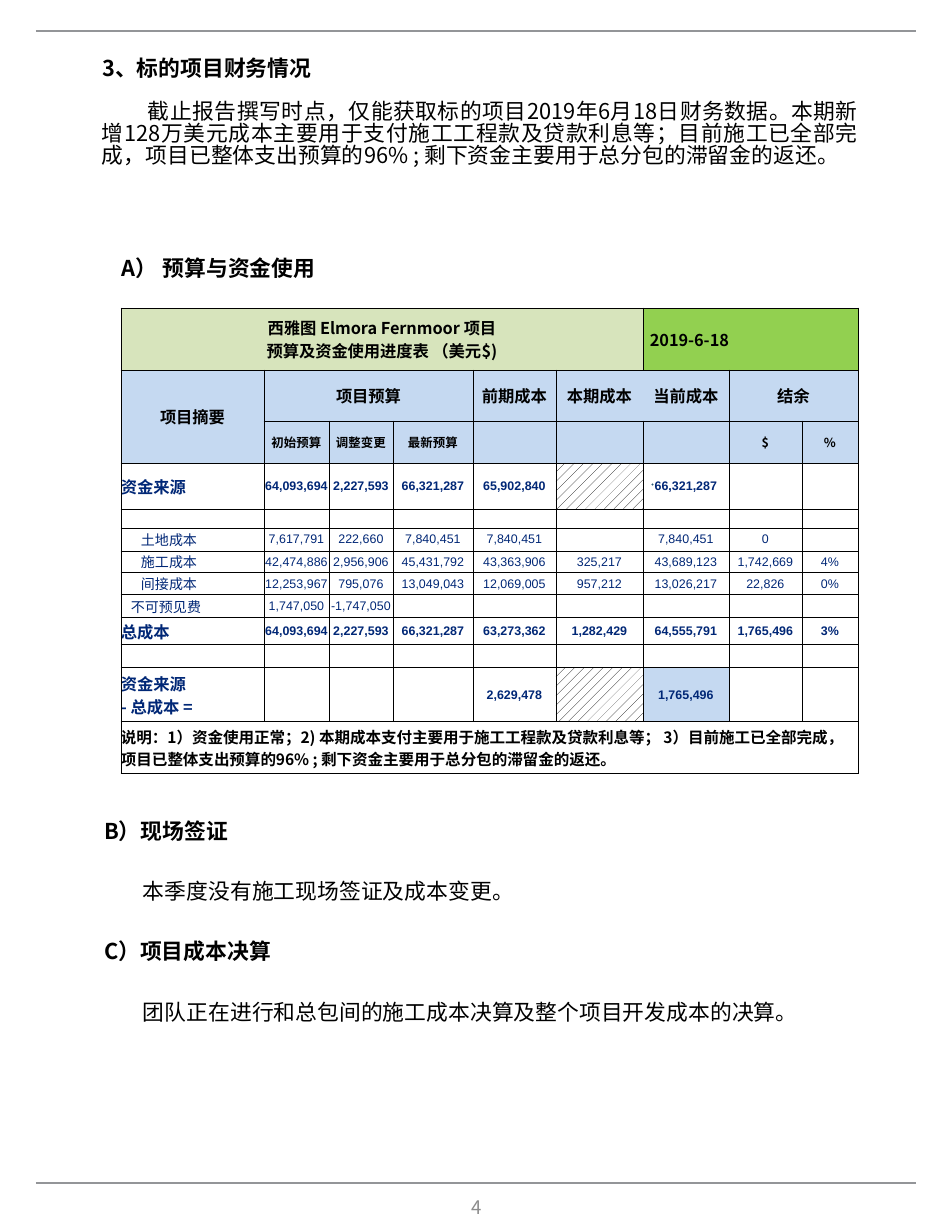
from dataclasses import dataclass
from typing import Optional

import lxml.etree
import pptx
import pptx.dml.color
import pptx.enum.dml
import pptx.enum.shapes
import pptx.enum.text
import pptx.oxml.ns
import pptx.util

RGB = pptx.dml.color.RGBColor
ALIGN = pptx.enum.text.PP_ALIGN
MIDDLE = pptx.enum.text.MSO_ANCHOR.MIDDLE
TOP = pptx.enum.text.MSO_ANCHOR.TOP
qn = pptx.oxml.ns.qn

PX = 914400 / 112  # EMU in one px
CJK, LATIN = "Noto Sans CJK SC", "Arial"
BLACK, WHITE = RGB(0, 0, 0), RGB(255, 255, 255)
NAVY, TICK = RGB(0x00, 0x27, 0x76), RGB(0x2E, 0x5A, 0x79)
RULE, PAGE = RGB(0x93, 0x95, 0x98), RGB(0x8C, 0x8C, 0x8C)
OLIVE, GREEN, BLUE = RGB(0xD7, 0xE4, 0xBC), RGB(0x92, 0xD0, 0x50), RGB(0xC5, 0xD9, 0xF1)


@dataclass
class Para:
    text: str
    size: float = 14
    bold: bool = False
    color: RGB = BLACK
    font: str = CJK
    align: ALIGN = ALIGN.LEFT
    indent: int = 0
    spacing: float = 1
    before: int = 0


@dataclass
class Header:
    row: int
    col: int
    text: str
    fill: RGB = BLUE
    size: float = 10.5
    rows: int = 1
    cols: int = 1
    align: ALIGN = ALIGN.CENTER
    left: int = 0


@dataclass
class Entry:
    label: str = ""
    values: tuple = ()
    bold: bool = False
    left: int = 0


def px(n: float) -> int:
    return round(n * PX)


def write(p, para: Para) -> None:
    p.text = para.text
    p.alignment, p.line_spacing = para.align, para.spacing
    p.space_before = pptx.util.Pt(para.before)
    f = p.font
    f.size, f.bold, f.name = pptx.util.Pt(para.size), para.bold, para.font
    f.color.rgb = para.color
    pPr = p._p.get_or_add_pPr()
    if para.indent:
        pPr.set("indent", str(px(para.indent)))
    ea = lxml.etree.SubElement(pPr.find(qn("a:defRPr")), qn("a:ea"))
    ea.set("typeface", CJK)


def fill_frame(sp, box: tuple, paras: list, anchor=TOP) -> None:
    sp.left, sp.top, sp.width, sp.height = map(px, box)
    tf = sp.text_frame
    tf.word_wrap, tf.vertical_anchor = True, anchor
    tf.auto_size = pptx.enum.text.MSO_AUTO_SIZE.NONE
    for i, para in enumerate(paras):
        write(tf.add_paragraph() if i else tf.paragraphs[0], para)


def add_text(s, box: tuple, paras: list, anchor=TOP) -> None:
    fill_frame(s.shapes.add_textbox(0, 0, 0, 0), box, paras, anchor)


def add_line(s, x1: int, y1: int, x2: int, y2: int, color: RGB) -> None:
    c = s.shapes.add_connector(pptx.enum.shapes.MSO_CONNECTOR.STRAIGHT, *map(px, (x1, y1, x2, y2)))
    c.line.color.rgb, c.line.width = color, pptx.util.Pt(1)
    lxml.etree.SubElement(c._element.spPr, qn("a:effectLst"))


def set_borders(cell, sides: str = "LRTB") -> None:
    tcPr = cell._tc.get_or_add_tcPr()
    for side in "LRTB":
        ln = lxml.etree.SubElement(tcPr, qn(f"a:ln{side}"), w="6350")
        if side in sides:
            solid = lxml.etree.SubElement(ln, qn("a:solidFill"))
            lxml.etree.SubElement(solid, qn("a:srgbClr"), val=str(BLACK))
        else:
            lxml.etree.SubElement(ln, qn("a:noFill"))


def set_cell(cell, para: Para, left: int = 0, fill: Optional[RGB] = None) -> None:
    cell.margin_left = px(left)
    write(cell.text_frame.paragraphs[0], para)
    if fill is not None:
        cell.fill.solid()
        cell.fill.fore_color.rgb = fill


COLS = [143, 65, 64, 80, 83, 87, 86, 73, 56]
ROWS = [62, 51, 42, 46, 19, 23, 22, 22, 23, 27, 23, 54, 52]
OPEN_SIDES = {(1, 5): "LTB", (1, 6): "RTB"}
HATCHED = [(3, 5), (11, 5)]
FIRST_ENTRY, NOTE_ROW = 3, 12

HEADERS = [
    Header(0, 0, "西雅图 Elmora Fernmoor 项目\v预算及资金使用进度表 （美元$)", OLIVE, cols=6),
    Header(0, 6, "2019-6-18", GREEN, cols=3, align=ALIGN.LEFT, left=7),
    Header(1, 0, "项目摘要", rows=2),
    Header(1, 1, "项目预算", cols=3),
    Header(1, 4, "前期成本"), Header(1, 5, "本期成本"), Header(1, 6, "当前成本"),
    Header(1, 7, "结余", cols=2),
] + [Header(2, c, t, size=8) for c, t in
     enumerate(["初始预算", "调整变更", "最新预算", "", "", "", "$", "%"], 1)]

ENTRIES = [
    Entry("资金来源", ("64,093,694", "2,227,593", "66,321,287", "65,902,840", "", "66,321,287"), True),
    Entry(),
    Entry("土地成本", ("7,617,791", "222,660", "7,840,451", "7,840,451", "", "7,840,451", "0"), left=20),
    Entry("施工成本", ("42,474,886", "2,956,906", "45,431,792", "43,363,906", "325,217",
                   "43,689,123", "1,742,669", "4%"), left=20),
    Entry("间接成本", ("12,253,967", "795,076", "13,049,043", "12,069,005", "957,212",
                   "13,026,217", "22,826", "0%"), left=20),
    Entry("不可预见费", ("1,747,050", "-1,747,050"), left=10),
    Entry("总成本", ("64,093,694", "2,227,593", "66,321,287", "63,273,362", "1,282,429",
                  "64,555,791", "1,765,496", "3%"), True),
    Entry(),
    Entry("资金来源\v- 总成本 =", ("", "", "", "2,629,478", "", "1,765,496"), True),
]
NOTE = ("说明：1）资金使用正常；2) 本期成本支付主要用于施工工程款及贷款利息等； 3）目前施工已全部完成，"
        "项目已整体支出预算的96% ; 剩下资金主要用于总分包的滞留金的返还。")


def add_budget_table(s) -> None:
    frame = s.shapes.add_table(len(ROWS), len(COLS), px(121), px(308), px(sum(COLS)), px(sum(ROWS)))
    t = frame.table
    t.first_row = t.horz_banding = False
    for col, w in zip(t.columns, COLS):
        col.width = px(w)
    for row, h in zip(t.rows, ROWS):
        row.height = px(h)

    # Plain grid
    for r in range(len(ROWS)):
        for c in range(len(COLS)):
            cell = t.cell(r, c)
            cell.margin_left = cell.margin_right = cell.margin_top = cell.margin_bottom = 0
            cell.vertical_anchor = MIDDLE
            set_borders(cell, OPEN_SIDES.get((r, c), "LRTB"))
            cell.fill.background()
            cell.text_frame.paragraphs[0]._p.get_or_add_endParaRPr().set("sz", "800")

    # Header rows
    for h in HEADERS:
        cell = t.cell(h.row, h.col)
        if h.rows * h.cols > 1:
            cell.merge(t.cell(h.row + h.rows - 1, h.col + h.cols - 1))
        set_cell(cell, Para(h.text, h.size, True, align=h.align), h.left, h.fill)

    # Funds and costs
    for r, e in enumerate(ENTRIES, FIRST_ENTRY):
        if e.label:
            set_cell(t.cell(r, 0), Para(e.label, 10.5 if e.bold else 9, e.bold, NAVY), e.left)
        for c, v in enumerate(e.values, 1):
            if v:
                set_cell(t.cell(r, c), Para(v, 8, e.bold, NAVY, LATIN, ALIGN.CENTER))
    balance = t.cell(11, 6).fill
    balance.solid()
    balance.fore_color.rgb = BLUE
    for r, c in HATCHED:
        fill = t.cell(r, c).fill
        fill.patterned()
        fill.pattern = pptx.enum.dml.MSO_PATTERN.PERCENT_20
        fill.fore_color.rgb, fill.back_color.rgb = BLACK, WHITE

    # Note
    t.cell(NOTE_ROW, 0).merge(t.cell(NOTE_ROW, len(COLS) - 1))
    set_cell(t.cell(NOTE_ROW, 0), Para(NOTE, 10, True))


def main() -> None:
    prs = pptx.Presentation()
    prs.slide_width, prs.slide_height = px(952), px(1232)
    s = prs.slides.add_slide(prs.slide_layouts[5])

    # Page frame
    add_line(s, 652, 485, 653, 484, TICK)
    for y in (31, 1183):
        add_line(s, 36, y, 916, y, RULE)
    add_text(s, (299, 1185, 355, 45), [Para("4", 12, color=PAGE, align=ALIGN.CENTER)], MIDDLE)

    # Heading and summary
    fill_frame(s.shapes.title, (91, 48, 778, 40), [Para("3、标的项目财务情况", bold=True)], MIDDLE)
    add_text(s, (91, 97, 778, 89), [Para(
        "截止报告撰写时点，仅能获取标的项目2019年6月18日财务数据。本期新增128万美元成本主要用于支付施工工程款"
        "及贷款利息等；目前施工已全部完成，项目已整体支出预算的96% ; 剩下资金主要用于总分包的滞留金的返还。",
        align=ALIGN.JUSTIFY, indent=46, spacing=0.83)])

    # Section A
    add_text(s, (65, 254, 306, 38), [Para("A） 预算与资金使用", bold=True, indent=46, spacing=0.83)])
    add_budget_table(s)

    # Sections B and C
    add_text(s, (93, 812, 753, 292), [
        Para("B）现场签证", bold=True),
        Para("本季度没有施工现场签证及成本变更。", indent=39, before=22),
        Para("C）项目成本决算", bold=True, before=22),
        Para("团队正在进行和总包间的施工成本决算及整个项目开发成本的决算。", indent=39, before=22),
    ])

    prs.save("out.pptx")


if __name__ == "__main__":
    main()
